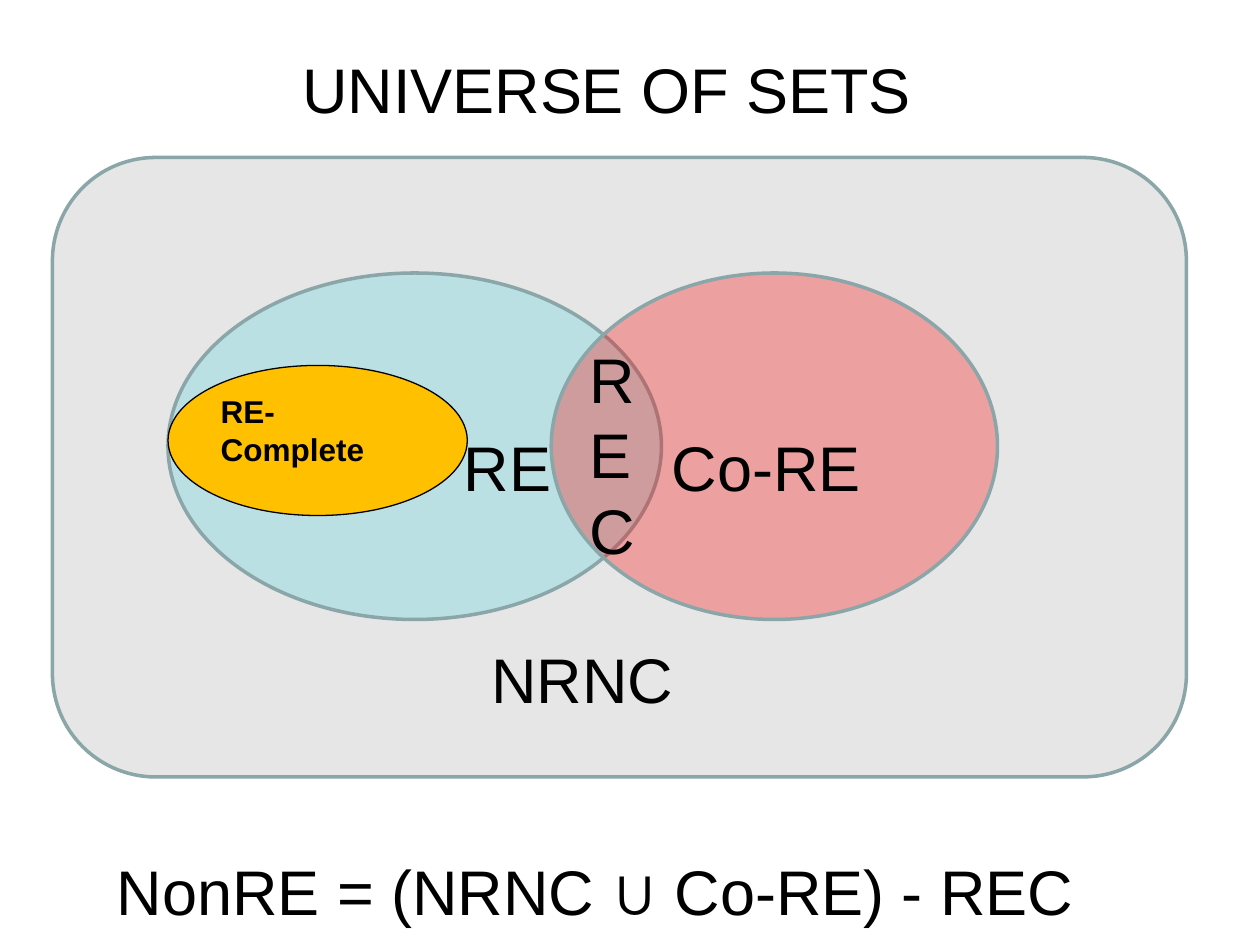
from lxml import etree
from pptx import Presentation
from pptx.dml.color import RGBColor
from pptx.enum.shapes import MSO_SHAPE
from pptx.enum.text import MSO_ANCHOR, MSO_AUTO_SIZE, PP_ALIGN
from pptx.oxml.ns import qn
from pptx.util import Inches, Pt

ROUND, OVAL = MSO_SHAPE.ROUNDED_RECTANGLE, MSO_SHAPE.OVAL
LEFT, MID = PP_ALIGN.LEFT, PP_ALIGN.CENTER
TOP, GROW = MSO_ANCHOR.TOP, MSO_AUTO_SIZE.SHAPE_TO_FIT_TEXT

HUE = {"gray": "E6E6E6", "edge": "8AA6A8", "blue": "BBE0E3",
       "red": "FF0000", "gold": "FFC000", "ink": "000000"}

deck = Presentation()
deck.slide_width, deck.slide_height = Inches(10), Inches(7.5)
slide = deck.slides.add_slide(deck.slide_layouts[6])

# Grid of 120 columns by 90 rows
COL, ROW = deck.slide_width / 120, deck.slide_height / 90


def place(x, y, w, h):
    return int(x * COL), int(y * ROW), int(w * COL), int(h * ROW)


def write(frame, text, size=36, bold=False, align=LEFT):
    frame.word_wrap = True
    frame.vertical_anchor = TOP
    para = frame.paragraphs[0]
    para.alignment = align
    run = para.add_run()
    run.text = text
    font = run.font
    font.name, font.size, font.bold = "Arial", Pt(size), bold
    font.color.rgb = RGBColor.from_string(HUE["ink"])


# Sets, from back to front: kind, box, fill, line, width, alpha, label
sets = [
    (ROUND, (5, 15, 108, 59), "gray", "edge", 2, 100, ""),
    (OVAL, (16, 26, 47, 33), "blue", "edge", 2, 100, ""),
    (OVAL, (52.5, 26, 42.5, 33), "red", "edge", 2, 30, ""),
    (OVAL, (16, 34.8, 28.5, 14.3), "gold", "ink", 0.75, 100, "RE-Complete"),
]
for kind, box, fill, line, width, alpha, label in sets:
    shape = slide.shapes.add_shape(kind, *place(*box))
    shape.shadow.inherit = False
    shape.fill.solid()
    shape.fill.fore_color.rgb = RGBColor.from_string(HUE[fill])
    shape.line.color.rgb = RGBColor.from_string(HUE[line])
    shape.line.width = Pt(width)
    if alpha < 100:
        tint = shape.fill._xPr.find(".//" + qn("a:srgbClr"))
        etree.SubElement(tint, qn("a:alpha"), val=str(alpha * 1000))
    if label:
        frame = shape.text_frame
        frame.margin_left = frame.margin_right = Inches(0.07)
        frame.margin_top = frame.margin_bottom = Inches(0.04)
        write(frame, label, size=18, bold=True)

# Labels; the narrow REC box breaks after each letter
LINE = 8.5
labels = [
    ("RE", (43, 40.2, 11.5, LINE), LEFT),
    ("Co-RE", (62.8, 40.2, 22.8, LINE), LEFT),
    ("REC", (55, 31.8, 3.5, 23), LEFT),
    ("UNIVERSE OF SETS", (27.6, 4.2, 61.8, LINE), LEFT),
    ("NRNC", (45.6, 60.4, 25.8, LINE), LEFT),
    ("NonRE = (NRNC ∪ Co-RE) - REC", (6.7, 80.6, 100, LINE), MID),
]
for text, box, align in labels:
    frame = slide.shapes.add_textbox(*place(*box)).text_frame
    frame.auto_size = GROW
    write(frame, text, align=align)

deck.save("out.pptx")
